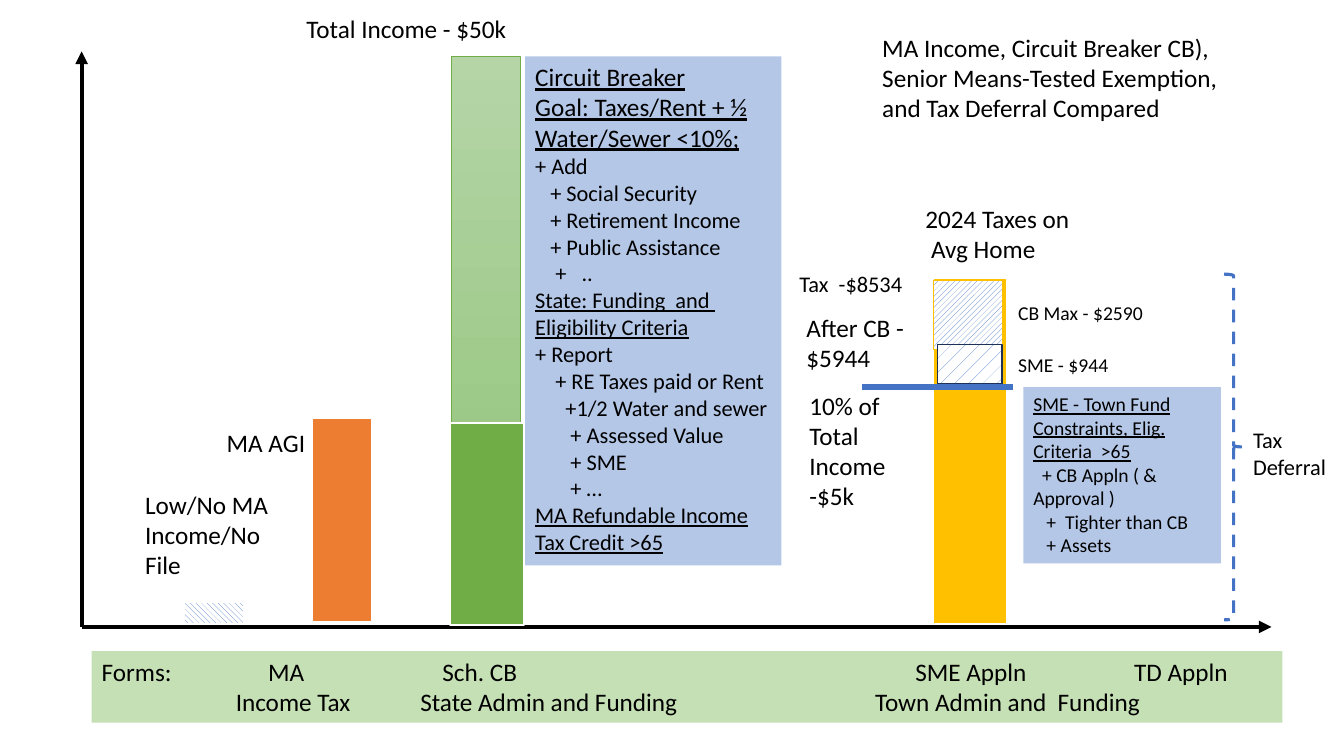
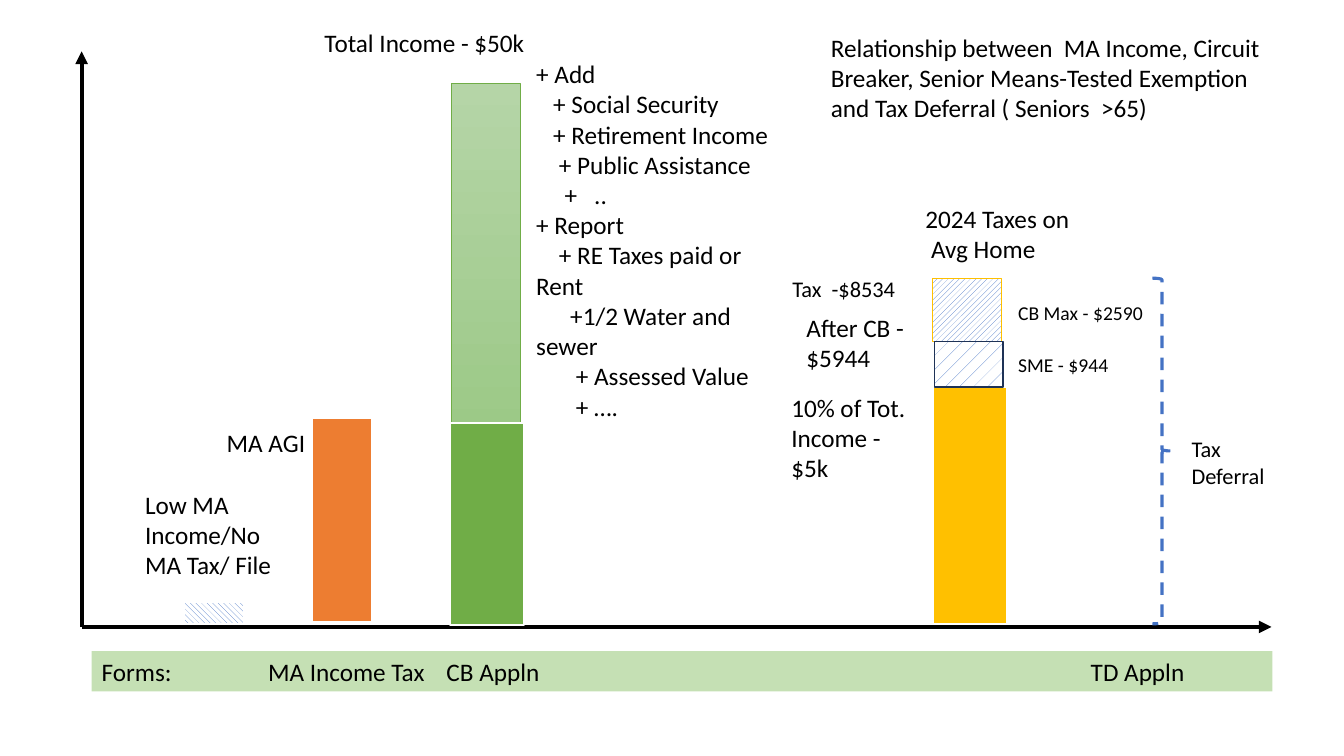
from dataclasses import dataclass

from lxml import etree
from pptx import Presentation
from pptx.dml.color import RGBColor
from pptx.enum.dml import MSO_LINE, MSO_PATTERN
from pptx.enum.shapes import MSO_CONNECTOR, MSO_SHAPE
from pptx.enum.text import MSO_ANCHOR, MSO_AUTO_SIZE, PP_ALIGN
from pptx.oxml.ns import qn
from pptx.util import Inches, Pt

RECT, BRACE = MSO_SHAPE.RECTANGLE, MSO_SHAPE.RIGHT_BRACE
DOWN_HATCH = MSO_PATTERN.WIDE_DOWNWARD_DIAGONAL
UP_HATCH = MSO_PATTERN.WIDE_UPWARD_DIAGONAL
DOTS = MSO_PATTERN.PERCENT_5
DASH = MSO_LINE.DASH
STRAIGHT = MSO_CONNECTOR.STRAIGHT
LEFT, TOP, NO_FIT = PP_ALIGN.LEFT, MSO_ANCHOR.TOP, MSO_AUTO_SIZE.NONE

# Shared colours and type
FONT = "Calibri"
BLACK, WHITE = "000000", "FFFFFF"
BLUE, NAVY, PALE_BLUE = "4472C4", "1E3256", "B4C7E7"
ORANGE, GOLD = "ED7D31", "FFC000"
GREEN, PALE_GREEN = "70AD47", "C5E0B4"
FADE = ("B5D5A7", "9CC987")

# Shared axes
ORIGIN = (0.81, 6.22)
AXIS_TOP, AXIS_RIGHT = 0.51, 12.61


@dataclass
class Line:
    text: str
    steps: int = 0  # first-line indent, in steps that grow with the text size
    size: float = 18
    underline: bool = False
    tabs: tuple = ()


def rgb(value):
    return RGBColor.from_string(value)


# Text
def write(frame, lines):
    for name, value in {"word_wrap": True, "auto_size": NO_FIT,
                        "vertical_anchor": TOP}.items():
        setattr(frame, name, value)
    for number, line in enumerate(lines):
        paragraph = frame.add_paragraph() if number else frame.paragraphs[0]
        paragraph.alignment = LEFT
        run = paragraph.add_run()
        run.text = line.text
        look = {"name": FONT, "size": Pt(line.size), "underline": line.underline}
        for name, value in look.items():
            setattr(run.font, name, value)
        run.font.color.rgb = rgb(BLACK)
        properties = paragraph._p.get_or_add_pPr()
        if line.steps:
            properties.set("marL", "0")
            properties.set("indent", str(Inches(line.steps * line.size / 320)))
        if line.tabs:
            stops = etree.SubElement(properties, qn("a:tabLst"))
            for position in line.tabs:
                etree.SubElement(stops, qn("a:tab"), pos=str(Inches(position)), algn="l")


def add_label(slide, at, *texts, size=18):
    box = slide.shapes.add_textbox(*map(Inches, at))
    write(box.text_frame, [t if isinstance(t, Line) else Line(t, size=size) for t in texts])


def add_title(slide, at, text):
    title = slide.shapes.title
    title.left, title.top, title.width, title.height = map(Inches, at)
    write(title.text_frame, [Line(text)])


# Shapes
def add_block(slide, at, fill, line=None, width=1.5, pattern=None, kind=RECT):
    """Draw a block; a pair of fill colours makes a downward gradient."""
    block = slide.shapes.add_shape(kind, *map(Inches, at))
    block.shadow.inherit = False
    if pattern:
        block.fill.patterned()
        block.fill.pattern = pattern
        block.fill.fore_color.rgb = rgb(fill)
        block.fill.back_color.rgb = rgb(WHITE)
    elif isinstance(fill, tuple):
        block.fill.gradient()
        block.fill.gradient_angle = 270
        for position, (stop, colour) in enumerate(zip(block.fill.gradient_stops, fill)):
            stop.position = position
            stop.color.rgb = rgb(colour)
    else:
        block.fill.solid()
        block.fill.fore_color.rgb = rgb(fill)
    if line:
        block.line.color.rgb = rgb(line)
        block.line.width = Pt(width)
    else:
        block.line.fill.background()
    return block


def add_panel(slide, at, fill, lines):
    write(add_block(slide, at, fill).text_frame, lines)


def add_rule(slide, start, end, colour, width, arrow=False):
    rule = slide.shapes.add_connector(STRAIGHT, *map(Inches, (*start, *end)))
    rule.line.color.rgb = rgb(colour)
    rule.line.width = Pt(width)
    if arrow:
        etree.SubElement(rule.line._get_or_add_ln(), qn("a:tailEnd"), type="triangle")
    etree.SubElement(rule._element.spPr, qn("a:effectLst"))


# Parts shared by both slides
def add_income_bars(slide, total_top, low_income):
    add_block(slide, (4.48, total_top, 0.68, 4.27 - total_top), FADE, GREEN, 0.5)
    for end in ((ORIGIN[0], AXIS_TOP), (AXIS_RIGHT, ORIGIN[1])):
        add_rule(slide, ORIGIN, end, BLACK, 3, arrow=True)
    add_block(slide, (1.82, 5.97, 0.6, 0.22), BLUE, WHITE, pattern=DOWN_HATCH)
    add_block(slide, (3.09, 4.15, 0.6, 2.02), ORANGE, WHITE)
    add_block(slide, (4.46, 4.2, 0.74, 2), GREEN, WHITE)
    add_label(slide, (2.15, 4.19, 1.38, 0.41), "MA AGI")
    add_label(slide, (1.34, 4.8, 1.49, 1.01), low_income)


def add_tax_bar(slide, gold_top, breaker, exemption):
    add_block(slide, (9.25, gold_top, 0.74, 6.19 - gold_top), GOLD, WHITE)
    add_block(slide, breaker, BLUE, GOLD, 0.5, UP_HATCH)
    add_block(slide, exemption, BLUE, NAVY, 1, DOTS)
    add_label(slide, (9.08, 1.97, 1.83, 0.71), "2024 Taxes on", Line("Avg Home", 1))
    add_label(slide, (7.9, 3.05, 1.18, 0.71), "After CB - $5944")
    add_label(slide, (10, 2.94, 1.53, 0.34), "CB Max - $2590", size=14)
    add_label(slide, (10, 3.45, 1.31, 0.34), "SME - $944", size=14)


def add_deferral(slide, brace_at, label_at):
    brace = add_block(slide, (*brace_at, 0.19, 3.43), WHITE, BLUE, 2.25, kind=BRACE)
    brace.line.dash_style = DASH
    add_label(slide, (*label_at, 1, 0.64), "Tax", "Deferral", size=16)


# Slides
def build_comparison(slide):
    add_title(slide, (8.65, 0.27, 3.96, 1.01),
              "MA Income, Circuit Breaker CB), Senior Means-Tested Exemption, "
              "and Tax Deferral Compared")
    add_income_bars(slide, 0.56, "Low/No MA Income/No File")
    add_label(slide, (2.94, 0.08, 2.76, 0.4), "Total Income - $50k")
    details = [("+ Add", 0), ("+ Social Security", 3), ("+ Retirement Income", 3),
               ("+ Public Assistance", 3), ("+   ..", 4),
               ("State: Funding  and  Eligibility Criteria", 0), ("+ Report", 0),
               ("+ RE Taxes paid or Rent", 4), ("+1/2 Water and sewer", 6),
               ("+ Assessed Value", 7), ("+ SME", 7), ("+ …", 7),
               ("MA Refundable Income Tax Credit >65", 0)]
    add_panel(slide, (5.21, 0.56, 2.54, 5.05), PALE_BLUE, [
        Line("Circuit Breaker", underline=True),
        Line("Goal: Taxes/Rent + ½ Water/Sewer <10%;", underline=True),
        *(Line(text, steps, 16, not (steps or text.startswith("+")))
          for text, steps in details)])
    add_tax_bar(slide, 2.76, (9.26, 2.78, 0.68, 0.69), (9.3, 3.42, 0.64, 0.39))
    add_label(slide, (7.83, 2.63, 1.33, 0.37), "Tax  -$8534", size=16)
    add_label(slide, (7.93, 3.82, 0.97, 1.31), "10% of Total Income -$5k")
    add_deferral(slide, (12.14, 2.72), (12.33, 4.18))
    add_panel(slide, (10.15, 3.84, 1.96, 1.75), PALE_BLUE, [
        Line("SME - Town Fund Constraints, Elig. Criteria  >65", 0, 14, True),
        Line("+ CB Appln ( & Approval )", 2, 14),
        Line("+  Tighter than CB", 3, 14),
        Line("+ Assets", 3, 14)])
    add_rule(slide, (8.55, 3.84), (10.05, 3.84), BLUE, 4.5)
    add_panel(slide, (0.91, 6.46, 11.81, 0.71), PALE_GREEN, [
        Line("Forms:\tMA\tSch. CB\tSME Appln\tTD Appln", tabs=(1.65, 3.38, 8.07, 10.24)),
        Line("\tIncome Tax\tState Admin and Funding\tTown Admin and  Funding",
             tabs=(1.33, 3.16, 7.67))])


def build_relationship(slide):
    add_title(slide, (8.14, 0.27, 4.54, 1.01),
              "Relationship between  MA Income, Circuit Breaker, Senior Means-Tested "
              "Exemption and Tax Deferral ( Seniors  >65)")
    add_income_bars(slide, 0.83, "Low MA Income/No MA Tax/ File")
    add_label(slide, (3.12, 0.22, 2.76, 0.4), "Total Income - $50k")
    add_label(slide, (5.22, 0.53, 2.64, 3.74),
              "+ Add", Line("+ Social Security", 3), Line("+ Retirement Income", 3),
              Line("+ Public Assistance", 4), Line("+   ..", 5),
              "+ Report", Line("+ RE Taxes paid or Rent", 4),
              Line("+1/2 Water and sewer", 6), Line("+ Assessed Value", 7),
              Line("+ ….", 7))
    add_tax_bar(slide, 3.84, (9.25, 2.76, 0.68, 0.63), (9.27, 3.39, 0.68, 0.45))
    add_label(slide, (7.76, 2.68, 1.33, 0.37), "Tax  -$8534", size=16)
    add_label(slide, (7.75, 3.84, 1.33, 1.31), "10% of Tot. Income -$5k")
    add_deferral(slide, (11.43, 2.76), (11.72, 4.27))
    add_panel(slide, (0.91, 6.46, 11.71, 0.4), PALE_GREEN, [
        Line("Forms:\tMA Income Tax\tCB Appln\tTD Appln", tabs=(1.65, 3.42, 9.81))])


def main():
    deck = Presentation()
    deck.slide_width, deck.slide_height = Inches(13.33), Inches(7.5)
    title_only = deck.slide_layouts[5]
    for build in (build_comparison, build_relationship):
        build(deck.slides.add_slide(title_only))
    deck.save("out.pptx")


if __name__ == "__main__":
    main()
